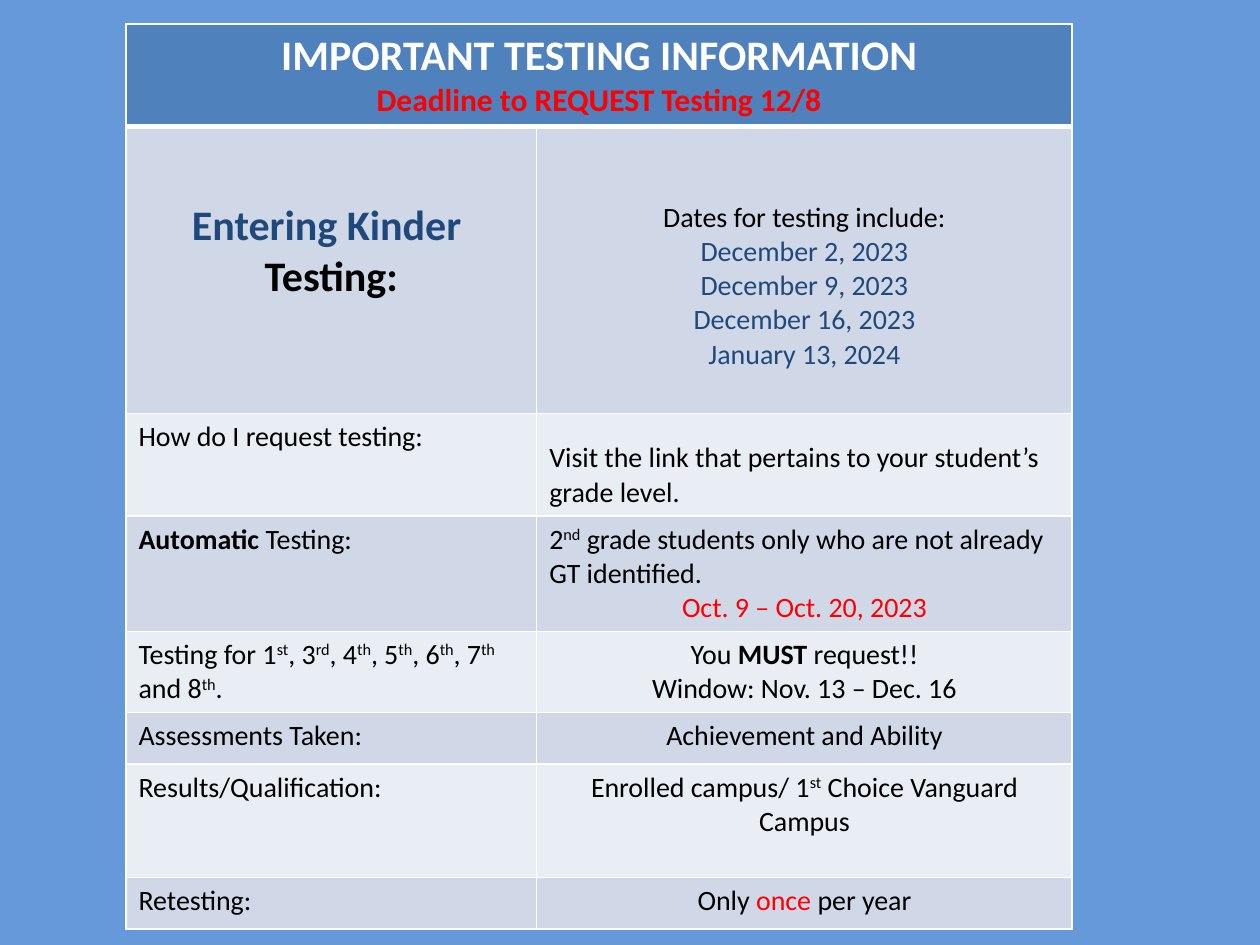
import pptx
import pptx.dml.color
import pptx.enum.text
import pptx.oxml.ns
import pptx.util
from lxml import etree

COLORS = {"page": "6699D9", "header": "4F81BD", "dark": "D0D8E8", "light": "E9EDF4",
          "white": "FFFFFF", "black": "000000", "red": "FF0000", "navy": "1F497D"}
LEFT, TOP = 1, 0.19
COLUMNS = [3.26, 4.25]
HEIGHTS = [0.8, 2.28, 0.81, 0.91, 0.64, 0.41, 0.9, 0.41]
TOP_MARGINS = {(1, 0): 0.59, (1, 1): 0.59, (2, 1): 0.22}

BOLD = {"bold": True}
RED = {"color": "red"}
NAVY = {"color": "navy"}
LARGE = {"size": 24, "bold": True}


def left(*spans):
    return "LEFT", spans


def center(*spans):
    return "CENTER", spans


# Each span is text or (text, format); text between carets is superscript.
HEADER = [center(("IMPORTANT TESTING INFORMATION", {**LARGE, "color": "white"})),
          center(("Deadline to REQUEST Testing 12/8", {**RED, "size": 18, "bold": True}))]
DATES = ["December 2, 2023", "December 9, 2023", "December 16, 2023", "January 13, 2024"]
ROWS = [
    [HEADER],
    [[center(("Entering Kinder ", {**LARGE, **NAVY})), center(("Testing:", LARGE))],
     [center("Dates for testing include:")] + [center((date, NAVY)) for date in DATES]],
    [[left("How do I request testing:")],
     [left("Visit the link that pertains to your student’s grade level.")]],
    [[left(("Automatic", BOLD), " Testing:")],
     [left("2^nd^ grade students only who are not already GT identified."),
      center(("Oct. 9 – Oct. 20, 2023", RED))]],
    [[left("Testing for 1^st^, 3^rd^, 4^th^, 5^th^, 6^th^, 7^th^ and 8^th^.")],
     [center("You ", ("MUST", BOLD), " request!!"), center("Window: Nov. 13 – Dec. 16")]],
    [[left("Assessments Taken:")], [center("Achievement and Ability")]],
    [[left("Results/Qualification:")],
     [center("Enrolled campus/ 1^st^ Choice Vanguard Campus")]],
    [[left("Retesting:")], [center("Only ", ("once", RED), " per year")]],
]


def rgb(name):
    return pptx.dml.color.RGBColor.from_string(COLORS[name])


def add_text(para, text, size=16, color="black", bold=False):
    for index, piece in enumerate(text.split("^")):
        if not piece:
            continue
        span = para.add_run()
        span.text = piece
        span.font.name = "Calibri"
        span.font.size = pptx.util.Pt(size)
        span.font.bold = bold
        span.font.color.rgb = rgb(color)
        if index % 2:
            span.font._element.set("baseline", "30000")


def fill_cell(cell, paragraphs):
    for index, (alignment, spans) in enumerate(paragraphs):
        frame = cell.text_frame
        para = frame.add_paragraph() if index else frame.paragraphs[0]
        para.alignment = getattr(pptx.enum.text.PP_ALIGN, alignment)
        for item in spans:
            text, style = (item, {}) if isinstance(item, str) else item
            add_text(para, text, **style)


def add_borders(cell, widths):
    properties = cell._tc.get_or_add_tcPr()
    for side, width in widths.items():
        line = etree.SubElement(properties, pptx.oxml.ns.qn("a:ln" + side),
                                w=str(pptx.util.Pt(width)))
        fill = etree.SubElement(line, pptx.oxml.ns.qn("a:solidFill"))
        etree.SubElement(fill, pptx.oxml.ns.qn("a:srgbClr"), val=COLORS["white"])


def row_color(row):
    return "header" if row == 0 else "dark" if row % 2 else "light"


def main():
    deck = pptx.Presentation()
    deck.slide_width = pptx.util.Inches(10)
    deck.slide_height = pptx.util.Inches(7.5)
    page = deck.slides.add_slide(deck.slide_layouts[6])
    page.background.fill.solid()
    page.background.fill.fore_color.rgb = rgb("page")

    bounds = [pptx.util.Inches(value) for value in (LEFT, TOP, sum(COLUMNS), sum(HEIGHTS))]
    table = page.shapes.add_table(len(HEIGHTS), len(COLUMNS), *bounds).table
    for column, width in zip(table.columns, COLUMNS):
        column.width = pptx.util.Inches(width)
    for row, height in zip(table.rows, HEIGHTS):
        row.height = pptx.util.Inches(height)
    table.cell(0, 0).merge(table.cell(0, 1))

    for row, contents in enumerate(ROWS):
        for column in range(len(COLUMNS)):
            cell = table.cell(row, column)
            cell.margin_top = pptx.util.Inches(TOP_MARGINS.get((row, column), 0.05))
            add_borders(cell, {"L": 1, "R": 1, "T": 3 if row == 1 else 1,
                               "B": 3 if row == 0 else 1})
            cell.fill.solid()
            cell.fill.fore_color.rgb = rgb(row_color(row))
            if column < len(contents):
                fill_cell(cell, contents[column])
    deck.save("out.pptx")


if __name__ == "__main__":
    main()
